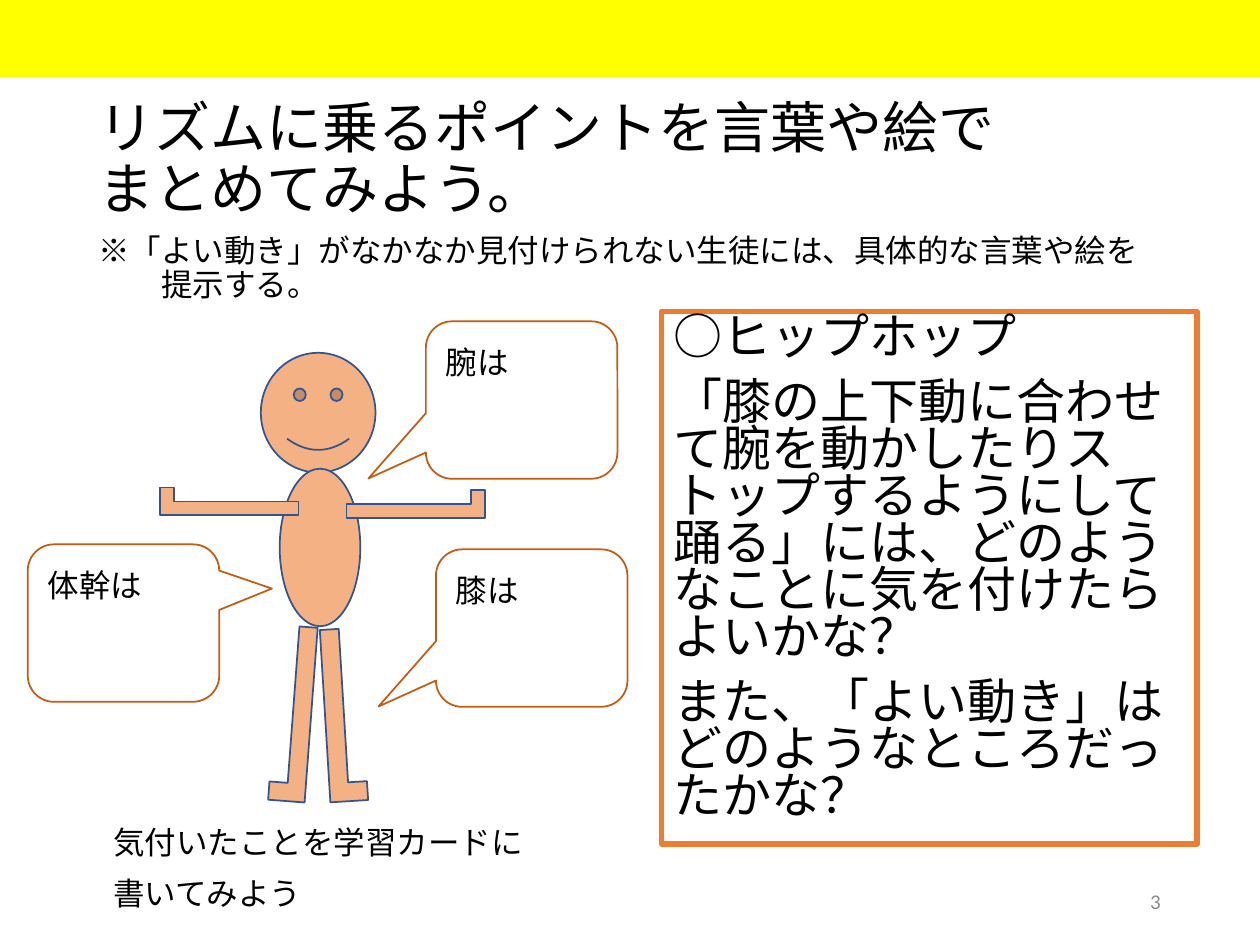
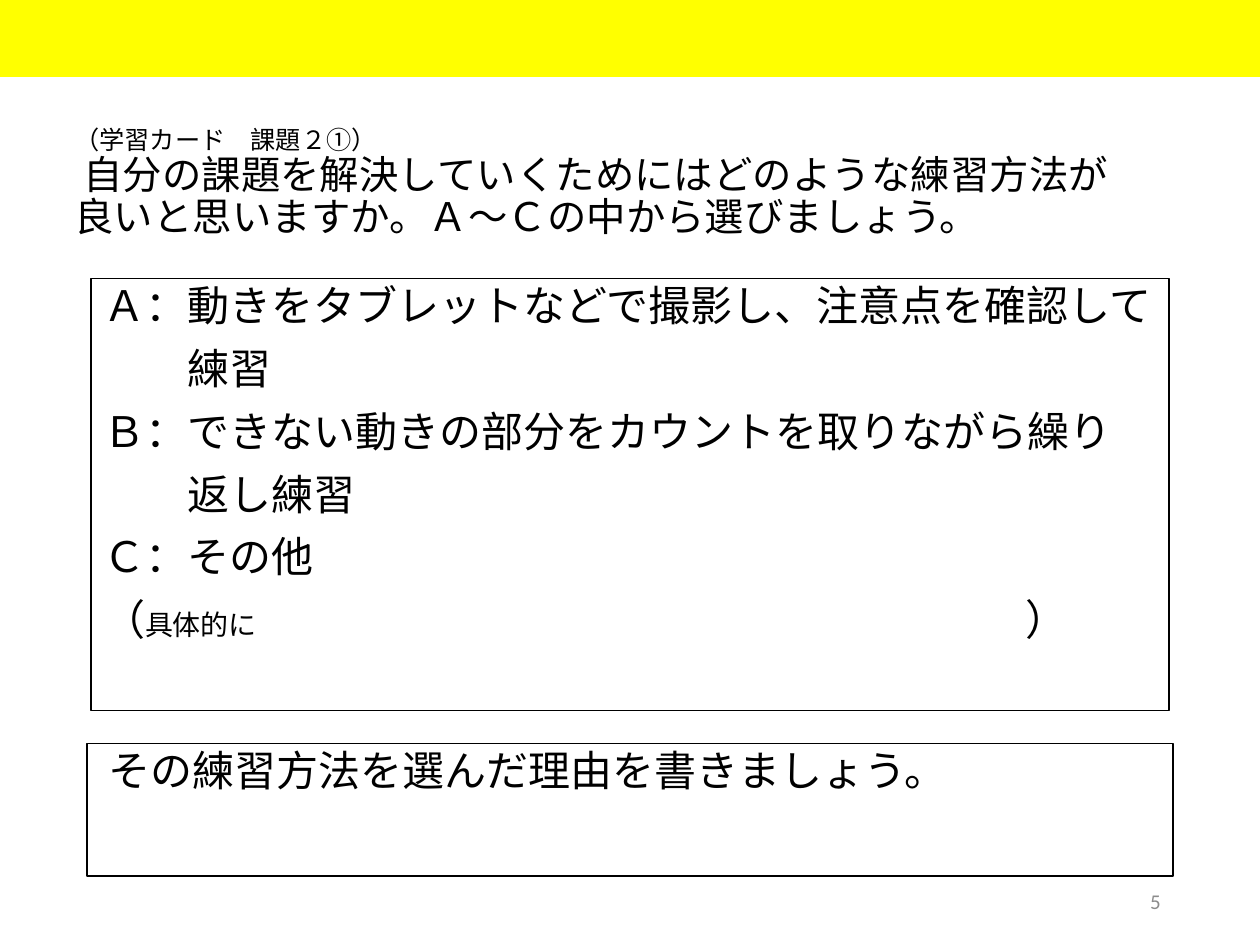
from lxml import etree
from pptx import Presentation
from pptx.dml.color import RGBColor
from pptx.enum.shapes import MSO_SHAPE
from pptx.enum.text import MSO_ANCHOR, MSO_AUTO_SIZE, PP_ALIGN
from pptx.oxml.ns import qn
from pptx.util import Emu, Pt

PX = 9144  # 100 px to the inch
TITLE_ONLY = 5
JAPANESE_FONT = "Noto Sans CJK JP"
LATIN_FONT = "Calibri"

BLACK = RGBColor(0, 0, 0)
WHITE = RGBColor(255, 255, 255)
YELLOW = RGBColor(255, 255, 0)
ORANGE = RGBColor(0xED, 0x7D, 0x31)
DARK_ORANGE = RGBColor(0xC5, 0x5A, 0x11)
SKIN = RGBColor(0xF4, 0xB1, 0x83)
NAVY = RGBColor(0x32, 0x54, 0x91)
GRAY = RGBColor(0x8C, 0x8C, 0x8C)

RECTANGLE = MSO_SHAPE.RECTANGLE
OVAL = MSO_SHAPE.OVAL
SMILEY = MSO_SHAPE.SMILEY_FACE
CORNER = MSO_SHAPE.CORNER
CALLOUT = MSO_SHAPE.ROUNDED_RECTANGULAR_CALLOUT
TOP, MIDDLE = MSO_ANCHOR.TOP, MSO_ANCHOR.MIDDLE
LEFT, RIGHT = PP_ALIGN.LEFT, PP_ALIGN.RIGHT


def px(*lengths):
    return [Emu(length * PX) for length in lengths]


def format_paragraph(paragraph, size, spacing=0.9, before=0, font=JAPANESE_FONT,
                     color=BLACK, alignment=LEFT):
    """Set the type; spacing is a share of a normal line of 1.2 times the size."""
    paragraph.alignment = alignment
    paragraph.line_spacing = Pt(round(size * 1.2 * spacing, 1))
    paragraph.space_before = Pt(before)
    paragraph.font.size = Pt(size)
    paragraph.font.color.rgb = color
    paragraph.font.name = font
    properties = paragraph._p.get_or_add_pPr().find(qn("a:defRPr"))
    etree.SubElement(properties, qn("a:ea")).set("typeface", JAPANESE_FONT)


def set_indent(paragraph, left, first_line=0):
    properties = paragraph._p.get_or_add_pPr()
    properties.set("marL", str(left * PX))
    properties.set("indent", str(first_line * PX))


def add_tab_stop(paragraph, position):
    properties = paragraph._p.get_or_add_pPr()
    tabs = etree.Element(qn("a:tabLst"))
    etree.SubElement(tabs, qn("a:tab"), pos=str(position * PX), algn="l")
    properties.find(qn("a:defRPr")).addprevious(tabs)


def write_lines(frame, lines, size, before=10, **style):
    """Write one paragraph a line, with space between but not above them."""
    for index, line in enumerate(lines):
        paragraph = frame.add_paragraph() if index else frame.paragraphs[0]
        paragraph.text = line
        format_paragraph(paragraph, size, before=before if index else 0, **style)
    return frame.paragraphs


def add_shape(slide, kind, box, fill=None, line=None, line_width=1):
    shape = slide.shapes.add_shape(kind, *px(*box))
    shape.shadow.inherit = False
    if fill is None:
        shape.fill.background()
    else:
        shape.fill.solid()
        shape.fill.fore_color.rgb = fill
    if line is None:
        shape.line.fill.background()
    else:
        shape.line.color.rgb = line
        shape.line.width = Pt(line_width)
    return shape


def add_panel(slide, box, line, line_width, lines, size, spacing=0.9):
    frame = add_shape(slide, RECTANGLE, box, WHITE, line, line_width).text_frame
    frame.vertical_anchor = TOP
    frame.margin_right = Emu(5 * PX)
    return write_lines(frame, lines, size, spacing=spacing)


def add_text_box(slide, box, lines, size, anchor=TOP, wrap=True, **style):
    frame = slide.shapes.add_textbox(*px(*box)).text_frame
    frame.word_wrap = wrap
    frame.vertical_anchor = anchor
    write_lines(frame, lines, size, **style)


def add_body_part(slide, kind, box, rotation=0, mirrored=False):
    part = add_shape(slide, kind, box, SKIN, NAVY)
    part.rotation = rotation
    if mirrored:
        part._element.spPr.find(qn("a:xfrm")).set("flipH", "1")


def add_callout(slide, left, top, text, tip):
    callout = add_shape(slide, CALLOUT, (left, top, 152, 125), line=DARK_ORANGE)
    callout.adjustments[0], callout.adjustments[1] = tip
    frame = callout.text_frame
    frame.vertical_anchor = TOP
    frame.margin_top = Emu(11 * PX)
    write_lines(frame, [text], 18, spacing=1, font=LATIN_FONT)


def add_titled_slide(presentation, number, title_box):
    """Add a slide with band and number; return it and its title's text frame."""
    slide = presentation.slides.add_slide(presentation.slide_layouts[TITLE_ONLY])
    title = slide.shapes.title
    title.left, title.top, title.width, title.height = px(*title_box)
    frame = title.text_frame
    frame.word_wrap = True
    frame.auto_size = MSO_AUTO_SIZE.NONE
    frame.vertical_anchor = MIDDLE
    add_shape(slide, RECTANGLE, (-2, 0, 1002, 61), YELLOW)
    add_text_box(slide, (706, 695, 225, 40), [str(number)], 12, anchor=MIDDLE,
                 spacing=1, font=LATIN_FONT, color=GRAY, alignment=RIGHT)
    return slide, frame


def add_dancer(slide):
    add_body_part(slide, SMILEY, (207, 280, 91, 95))
    add_body_part(slide, OVAL, (222, 372, 64, 125))
    add_body_part(slide, CORNER, (258, 499, 30, 137), rotation=356.5)
    add_body_part(slide, CORNER, (275, 389, 110, 22), mirrored=True)
    add_body_part(slide, CORNER, (127, 387, 110, 22))
    add_body_part(slide, CORNER, (218, 497, 29, 139), rotation=4.3, mirrored=True)


def build_rhythm_slide(presentation):
    slide, title = add_titled_slide(presentation, 3, (68, 63, 862, 193))
    write_lines(title, ["リズムに乗るポイントを言葉や絵で\nまとめてみよう。"], 32)
    note = title.add_paragraph()
    note.text = "※「よい動き」がなかなか見付けられない生徒には、具体的な言葉や絵を\n提示する。"
    format_paragraph(note, 18, before=8)
    set_indent(note, 50, -50)

    add_panel(slide, (525, 247, 425, 423), ORANGE, 3, [
        "○ヒップホップ",
        "「膝の上下動に合わせて腕を動かしたりストップするようにして踊る」には、"
        "どのようなことに気を付けたらよいかな？",
        "また、「よい動き」はどのようなところだったかな？",
    ], 28, spacing=0.8)

    add_dancer(slide)
    lower_left, right = (-0.8, 0.498), (0.775, -0.219)
    add_callout(slide, 346, 436, "膝は", lower_left)
    add_callout(slide, 338, 255, "腕は", lower_left)
    add_callout(slide, 22, 432, "体幹は", right)
    add_text_box(slide, (80, 651, 348, 79),
                 ["気付いたことを学習カードに", "書いてみよう"], 18, wrap=False)


def build_practice_slide(presentation):
    slide, title = add_titled_slide(presentation, 5, (49, 73, 902, 145))
    write_lines(title, ["（学習カード　課題２①）"], 14.4)
    question = title.add_paragraph()
    question.text = (" 自分の課題を解決していくためにはどのような練習方法が\n"
                     "良いと思いますか。Ａ～Ｃの中から選びましょう。")
    format_paragraph(question, 22.5)

    choices = add_panel(slide, (72, 221, 856, 343), BLACK, 1, [
        "Ａ：動きをタブレットなどで撮影し、注意点を確認して",
        "練習",
        "Ｂ：できない動きの部分をカウントを取りながら繰り",
        "返し練習",
        "Ｃ：その他",
        "（",
    ], 24)
    for continuation in (choices[1], choices[3]):
        set_indent(continuation, 67)
    details = choices[-1]
    add_tab_stop(details, 732)
    prompt = details.add_run()
    prompt.text = "具体的に"
    prompt.font.size = Pt(16)
    details.add_run().text = "\t）"

    add_panel(slide, (69, 590, 862, 105), BLACK, 1,
              [" その練習方法を選んだ理由を書きましょう。"], 24)


def main():
    presentation = Presentation()
    presentation.slide_width, presentation.slide_height = px(1000, 750)
    build_rhythm_slide(presentation)
    build_practice_slide(presentation)
    presentation.save("out.pptx")


if __name__ == "__main__":
    main()
